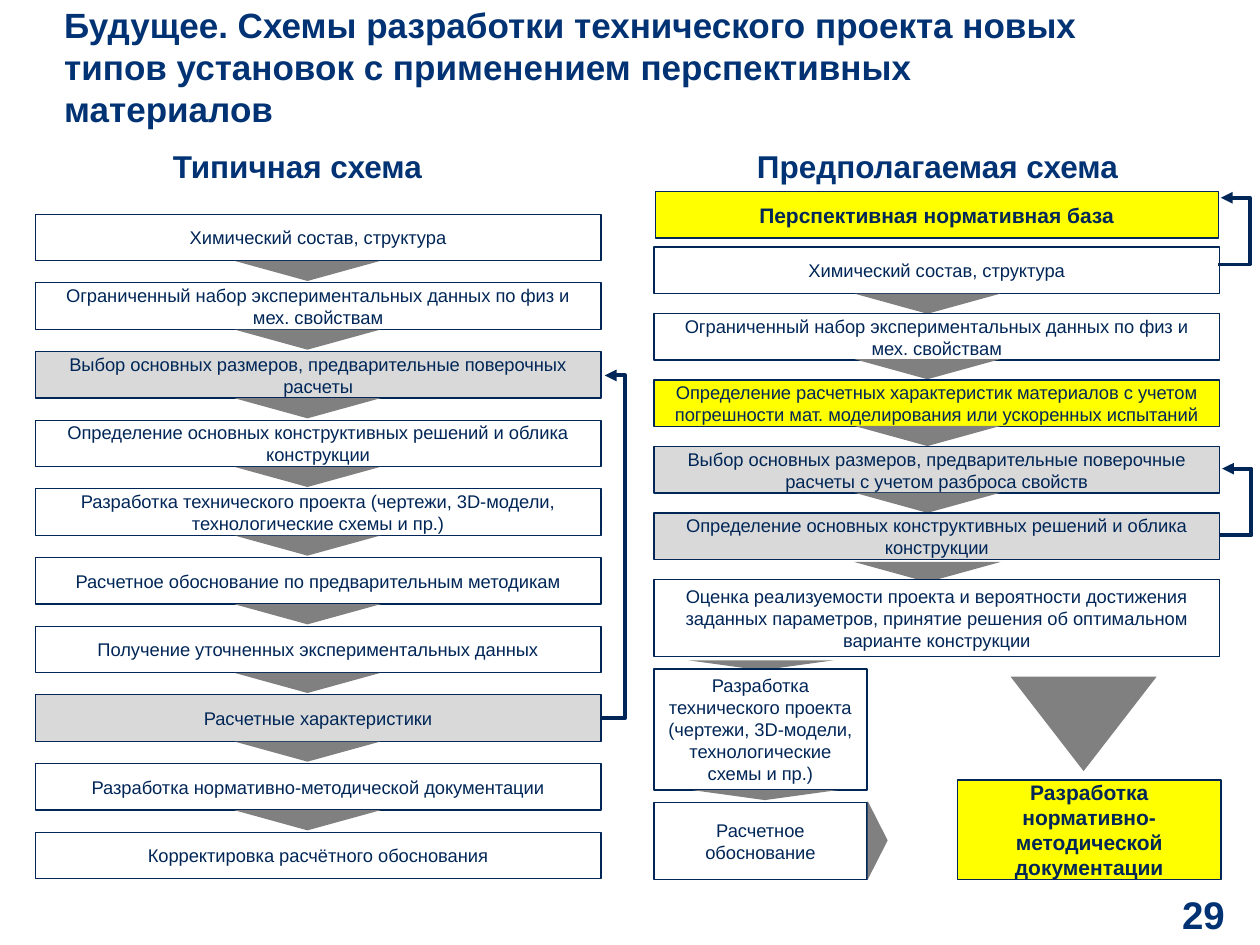
from pptx import Presentation
from pptx.dml.color import RGBColor
from pptx.enum.shapes import MSO_CONNECTOR as Conn, MSO_SHAPE as Geo
from pptx.enum.text import MSO_ANCHOR as Anchor, PP_ALIGN as Align
from pptx.oxml.ns import qn
from pptx.util import Inches, Pt
from lxml.etree import SubElement

BLUE = RGBColor(0x00, 0x32, 0x74)
NAVY = RGBColor(0x00, 0x26, 0x57)
WHITE = RGBColor(0xFF, 0xFF, 0xFF)
PALE = RGBColor(0xD9, 0xD9, 0xD9)
GRAY = RGBColor(0x80, 0x80, 0x80)
YELLOW = RGBColor(0xFF, 0xFF, 0x00)

prs = Presentation()
prs.slide_width, prs.slide_height = Inches(10), Inches(7.5)
slide = prs.slides.add_slide(prs.slide_layouts[5])
shapes = slide.shapes


def add_box(text, x, y, w=4.49, h=0.37, fill=WHITE, size=10.5, bold=False):
    box = shapes.add_shape(Geo.RECTANGLE, Inches(x), Inches(y), Inches(w), Inches(h))
    box.shadow.inherit = False
    box.fill.solid()
    box.fill.fore_color.rgb = fill
    box.line.color.rgb = NAVY
    box.line.width = Pt(0.75)
    frame = box.text_frame
    frame.word_wrap = True
    frame.vertical_anchor = Anchor.MIDDLE
    frame.text = text
    par = frame.paragraphs[0]
    par.alignment = Align.CENTER
    font = par.runs[0].font
    font.name, font.size, font.bold = "Arial", Pt(size), bold
    font.color.rgb = NAVY


def add_tip(x, y, w=1.16, h=0.16, turn=180):
    tip = shapes.add_shape(Geo.ISOSCELES_TRIANGLE, Inches(x), Inches(y), Inches(w), Inches(h))
    tip.rotation = turn
    tip.shadow.inherit = False
    tip.fill.solid()
    tip.fill.fore_color.rgb = GRAY
    tip.line.fill.background()


# Title
title = shapes.title
title.left, title.top = Inches(0.51), Inches(0)
title.width, title.height = Inches(8.35), Inches(1.05)
title.text_frame.text = ("Будущее. Схемы разработки технического проекта новых типов "
                         "установок с применением перспективных материалов")

# Column headings and page number
labels = [(title, Align.LEFT, 20, 0)]
for text, x, y, w, h, align, size, pad in [
    ("Типичная схема", -0.2, 1.12, 5.12, 0.4, Align.CENTER, 18, 0.1),
    ("Предполагаемая схема", 5.08, 1.12, 4.72, 0.4, Align.CENTER, 18, 0.1),
    ("29", 9.03, 7.05, 0.69, 0.41, Align.RIGHT, 22, 0),
]:
    label = shapes.add_textbox(Inches(x), Inches(y), Inches(w), Inches(h))
    label.text_frame.text = text
    labels.append((label, align, size, pad))

for label, align, size, pad in labels:
    frame = label.text_frame
    frame.word_wrap = True
    frame.vertical_anchor = Anchor.MIDDLE
    frame.margin_left = frame.margin_right = Inches(pad)
    frame.margin_top = frame.margin_bottom = Inches(pad / 2)
    par = frame.paragraphs[0]
    par.alignment = align
    font = par.runs[0].font
    font.name, font.size, font.bold = "Arial", Pt(size), True
    font.color.rgb = BLUE

# Left column: ten steps at an equal pitch
usual = [
    ("Химический состав, структура", WHITE),
    ("Ограниченный набор экспериментальных данных по физ и мех. свойствам", WHITE),
    ("Выбор основных размеров, предварительные поверочных расчеты", PALE),
    ("Определение основных конструктивных решений и облика конструкции", WHITE),
    ("Разработка технического проекта (чертежи, 3D-модели, технологические схемы и пр.)", WHITE),
    ("Расчетное обоснование по предварительным методикам", WHITE),
    ("Получение уточненных экспериментальных данных", WHITE),
    ("Расчетные характеристики", PALE),
    ("Разработка нормативно-методической документации", WHITE),
    ("Корректировка расчётного обоснования", WHITE),
]
for i, (text, fill) in enumerate(usual):
    top = 1.7 + 0.545 * i
    add_box(text, 0.28, top, fill=fill)
    if i < len(usual) - 1:
        add_tip(1.86, top + 0.37)

# Right column: the main steps
add_box("Перспективная нормативная база", 5.2, 1.52, w=4.47, fill=YELLOW, size=12, bold=True)
planned = [
    ("Химический состав, структура", WHITE, 2.33),
    ("Ограниченный набор экспериментальных данных по физ и мех. свойствам", WHITE, 2.85),
    ("Определение расчетных характеристик материалов с учетом погрешности "
     "мат. моделирования или ускоренных испытаний", YELLOW, 3.38),
    ("Выбор основных размеров, предварительные поверочные расчеты "
     "с учетом разброса свойств", PALE, 3.91),
    ("Определение основных конструктивных решений и облика конструкции", PALE, 4.46),
]
for i, (text, fill, tip_top) in enumerate(planned):
    add_box(text, 5.19, 1.96 + 0.528 * i, fill=fill)
    add_tip(6.78, tip_top)
add_box("Оценка реализуемости проекта и вероятности достижения заданных параметров, "
        "принятие решения об оптимальном варианте конструкции", 5.19, 4.6, h=0.61)

# Right column: the two closing branches
add_tip(8.02, 5.37, h=0.75)
add_tip(5.46, 5.24, h=0.08)
add_box(usual[4][0], 5.19, 5.31, w=1.69, h=0.96)
add_tip(5.49, 6.27, h=0.08)
add_box("Расчетное обоснование", 5.19, 6.37, w=1.69, h=0.61)
add_tip(6.65, 6.59, w=0.63, turn=90)
add_box(usual[8][0], 7.6, 6.19, w=2.09, h=0.79, fill=YELLOW, size=12, bold=True)

# Feedback arrows: start, end and the x of the bend
for x1, y1, x2, y2, bend in [
    (4.76, 5.7, 4.8, 2.98, 4.96),
    (9.68, 4.25, 9.7, 3.72, 9.93),
    (9.67, 2.1, 9.69, 1.57, 9.92),
]:
    link = shapes.add_connector(Conn.ELBOW, Inches(x1), Inches(y1), Inches(x2), Inches(y2))
    link.line.color.rgb = NAVY
    link.line.width = Pt(2.25)
    props = link._element.spPr
    SubElement(props.find(qn("a:ln")), qn("a:tailEnd"), type="triangle")
    SubElement(props, qn("a:effectLst"))
    ratio = round((bend - x1) / (x2 - x1) * 100000)
    guides = props.find(qn("a:prstGeom")).find(qn("a:avLst"))
    SubElement(guides, qn("a:gd"), name="adj1", fmla=f"val {ratio}")

prs.save("out.pptx")
